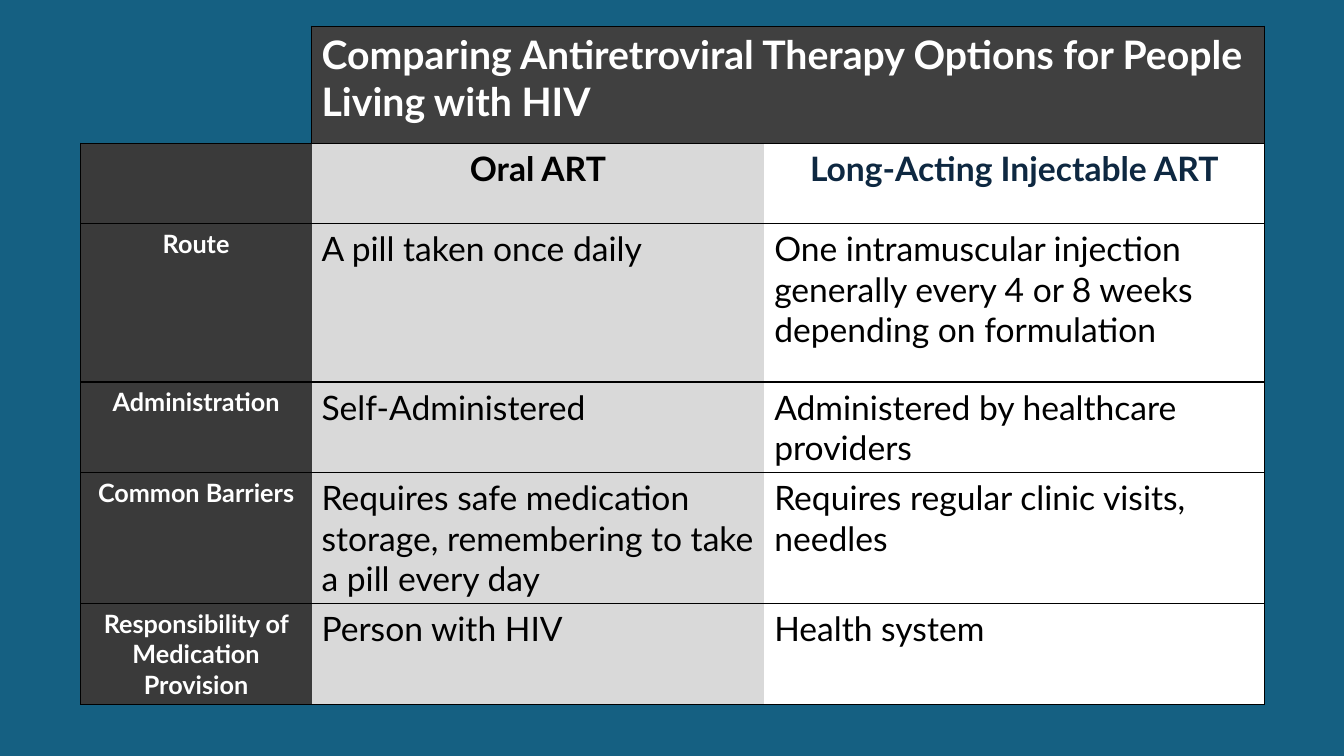
"""Builds a slide comparing oral and injectable antiretroviral therapy."""
import dataclasses

import lxml.etree
import pptx
import pptx.dml.color
import pptx.enum.text
import pptx.oxml.ns
import pptx.util

Inches = pptx.util.Inches
ALIGN = pptx.enum.text.PP_ALIGN
NO_STYLE = "{2D5ABB26-0587-4C30-8999-92F81FD0307C}"


@dataclasses.dataclass(frozen=True)
class Theme:
    """Colours, type sizes and line width of the slide."""
    font: str = "Lato"
    backdrop: str = "156082"
    banner: str = "404040"
    label: str = "3A3A3A"
    oral: str = "D9D9D9"
    white: str = "FFFFFF"
    black: str = "000000"
    navy: str = "0E2841"
    title_size: int = 28
    body_size: int = 24
    label_size: int = 18
    border: float = 1


def rgb(colour):
    """Return the colour object for a hex value."""
    return pptx.dml.color.RGBColor.from_string(colour)


class SlideBuilder:
    """Holds the theme and the current page and adds elements to it."""

    def __init__(self, deck, theme):
        """Add a blank page with the theme backdrop."""
        self.theme = theme
        self.page = deck.slides.add_slide(deck.slide_layouts[6])
        fill = self.page.background.fill
        fill.solid()
        fill.fore_color.rgb = rgb(theme.backdrop)

    def table(self, left, top, widths, heights):
        """Add an unstyled table with the given column widths and row heights."""
        frame = self.page.shapes.add_table(
            len(heights), len(widths), Inches(left), Inches(top),
            Inches(sum(widths)), Inches(sum(heights)))
        grid = frame.table
        grid.first_row = grid.horz_banding = False
        grid._tbl.tblPr.find(pptx.oxml.ns.qn("a:tableStyleId")).text = NO_STYLE
        for column, width in zip(grid.columns, widths):
            column.width = Inches(width)
        for row, height in zip(grid.rows, heights):
            row.height = Inches(height)
        return grid

    def borders(self, cell, sides):
        """Draw black lines on the named sides of a cell."""
        properties = cell._tc.get_or_add_tcPr()
        for position, side in enumerate(s for s in "LRTB" if s in sides):
            line = lxml.etree.Element(
                pptx.oxml.ns.qn(f"a:ln{side}"),
                w=str(pptx.util.Pt(self.theme.border)))
            fill = lxml.etree.SubElement(line, pptx.oxml.ns.qn("a:solidFill"))
            lxml.etree.SubElement(
                fill, pptx.oxml.ns.qn("a:srgbClr"), val=self.theme.black)
            properties.insert(position, line)

    def cell(self, cell, text, fill, sides, colour, size, bold=False, align=ALIGN.LEFT):
        """Fill, border and write one cell."""
        cell.fill.solid()
        cell.fill.fore_color.rgb = rgb(fill)
        self.borders(cell, sides)
        para = cell.text_frame.paragraphs[0]
        para.alignment = align
        if not text:
            return
        span = para.add_run()
        span.text = text
        span.font.color.rgb = rgb(colour)
        formats = {"name": self.theme.font, "size": pptx.util.Pt(size), "bold": bold}
        for name, value in formats.items():
            setattr(span.font, name, value)


TITLE = "Comparing Antiretroviral Therapy Options for People Living with HIV"
HEADINGS = ("", "Oral ART", "Long-Acting Injectable ART")
ROWS = (
    ("Route", "A pill taken once daily",
     "One intramuscular injection generally every 4 or 8 weeks depending on formulation"),
    ("Administration", "Self-Administered", "Administered by healthcare providers"),
    ("Common Barriers",
     "Requires safe medication storage, remembering to take a pill every day",
     "Requires regular clinic visits, needles"),
    ("Responsibility of Medication Provision", "Person with HIV", "Health system"),
)


def main():
    """Build and save the deck."""
    deck = pptx.Presentation()
    deck.slide_width, deck.slide_height = Inches(13.33), Inches(7.5)
    theme = Theme()
    builder = SlideBuilder(deck, theme)
    grid = builder.table(0.8, 0.26, (2.29, 4.49, 4.96),
                         (1.16, 0.8, 1.57, 0.9, 1.3, 1.0))

    builder.cell(grid.cell(0, 0), "", theme.backdrop, "RB", theme.white, theme.label_size)
    grid.cell(0, 1).merge(grid.cell(0, 2))
    builder.cell(grid.cell(0, 1), TITLE, theme.banner, "LRTB", theme.white,
                 theme.title_size, bold=True)
    builder.borders(grid.cell(0, 2), "RTB")

    fills = (theme.label, theme.oral, theme.white)
    edges = ("LTB", "TB", "RTB")
    heading_colours = (theme.white, theme.black, theme.navy)
    for row, texts in enumerate((HEADINGS, *ROWS), start=1):
        for column, text in enumerate(texts):
            is_label, is_heading = column == 0, row == 1
            strong = is_label or is_heading
            builder.cell(
                grid.cell(row, column), text, fills[column], edges[column],
                heading_colours[column] if strong else theme.black,
                theme.label_size if is_label else theme.body_size,
                bold=strong, align=ALIGN.CENTER if strong else ALIGN.LEFT)

    deck.save("out.pptx")


if __name__ == "__main__":
    main()
